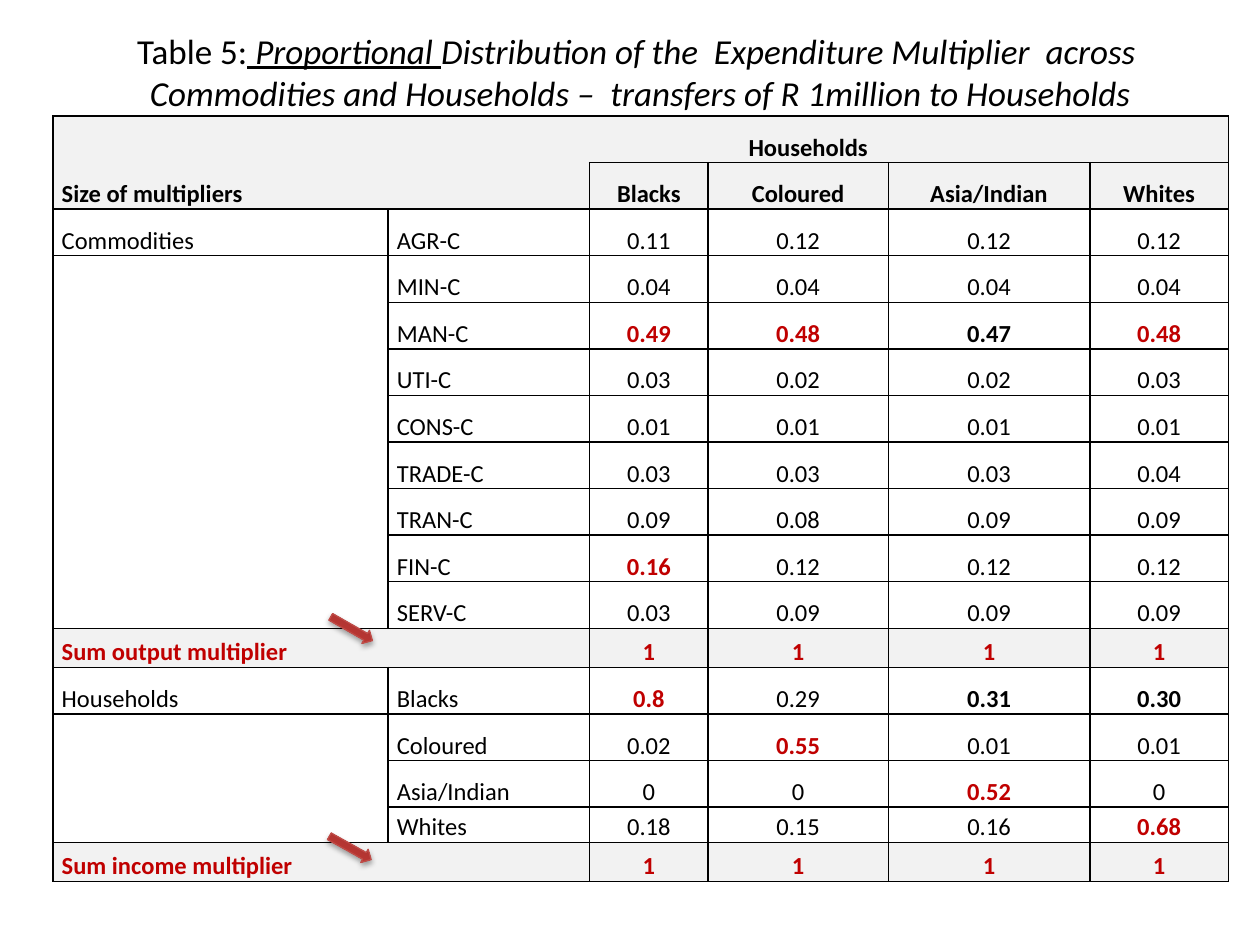
"""Build the slide on the proportional expenditure multiplier by commodity and household."""
from lxml.etree import SubElement
from pptx import Presentation
from pptx.dml.color import RGBColor
from pptx.enum.shapes import MSO_SHAPE
from pptx.enum.text import MSO_ANCHOR, PP_ALIGN
from pptx.oxml import parse_xml
from pptx.oxml.ns import nsdecls, qn
from pptx.util import Inches, Pt

BLACK = RGBColor(0x00, 0x00, 0x00)
RED = RGBColor(0xC0, 0x00, 0x00)
WHITE = RGBColor(0xFF, 0xFF, 0xFF)
GREY = RGBColor(0xF2, 0xF2, 0xF2)
ARROW_LINE = RGBColor(0xBF, 0x4C, 0x48)
ARROW_DARK = RGBColor(0x9C, 0x2F, 0x2D)
ARROW_LIGHT = RGBColor(0xCE, 0x3B, 0x37)
FONT = "Calibri"
NO_GRID_STYLE = "{2D5ABB26-0587-4C30-8999-92F81FD0307C}"

TITLE = [
    ("Table 5:", {}),
    (" ", {"underline": True}),
    ("Proportional ", {"underline": True, "italic": True}),
    ("Distribution of the  Expenditure Multiplier  across  Commodities and Households –  "
     "transfers of R 1million to Households", {"italic": True}),
]
ROWS = [
    ["", "", "Households", "", "", "", ""],
    ["Size of multipliers", "", "", "Blacks", "Coloured", "Asia/Indian", "Whites"],
    ["Commodities", "", "AGR-C", "0.11", "0.12", "0.12", "0.12"],
    ["", "", "MIN-C", "0.04", "0.04", "0.04", "0.04"],
    ["", "", "MAN-C", "0.49", "0.48", "0.47", "0.48"],
    ["", "", "UTI-C", "0.03", "0.02", "0.02", "0.03"],
    ["", "", "CONS-C", "0.01", "0.01", "0.01", "0.01"],
    ["", "", "TRADE-C", "0.03", "0.03", "0.03", "0.04"],
    ["", "", "TRAN-C", "0.09", "0.08", "0.09", "0.09"],
    ["", "", "FIN-C", "0.16", "0.12", "0.12", "0.12"],
    ["", "", "SERV-C", "0.03", "0.09", "0.09", "0.09"],
    ["Sum output multiplier", "", "", "1", "1", "1", "1"],
    ["Households", "", "Blacks", "0.8", "0.29", "0.31", "0.30"],
    ["", "", "Coloured", "0.02", "0.55", "0.01", "0.01"],
    ["", "", "Asia/Indian", "0", "0", "0.52", "0"],
    ["", "", "Whites", "0.18", "0.15", "0.16", "0.68"],
    ["Sum income multiplier", "", "", "1", "1", "1", "1"],
]
HEADER_ROWS = (0, 1)
SUM_ROWS = (11, 16)
RED_CELLS = {(4, 3), (4, 4), (4, 6), (9, 3), (12, 3), (13, 4), (14, 5), (15, 6)}
BOLD_CELLS = {(4, 5), (12, 5), (12, 6)}
COL_WIDTHS = [1.33, 1.33, 1.6, 0.94, 1.43, 1.6, 1.1]
ROW_HEIGHT, SHORT_ROWS = 0.37, {11: 0.31, 15: 0.28, 16: 0.31}
ARROWS = [(2.6, 4.93, 29.7), (2.59, 6.67, 29.2)]


def region(row, col):
    """Name the outlined area that a cell belongs to."""
    if not (0 <= row < len(ROWS) and 0 <= col < len(COL_WIDTHS)):
        return "outside"
    if row == 0 or (row == 1 and col < 3):
        return "header"
    if row in SUM_ROWS and col < 3:
        return f"sum {row}"
    if col < 2:
        return "commodities" if row < SUM_ROWS[0] else "households"
    return row, col


def add_borders(cell, row, col):
    """Draw each cell side that meets another region."""
    neighbours = {
        "L": (row, col - 1),
        "R": (row, col + (cell.span_width if cell.is_merge_origin else 1)),
        "T": (row - 1, col),
        "B": (row + 1, col),
    }
    tc_pr = cell._tc.get_or_add_tcPr()
    for side, other in neighbours.items():
        if region(*other) != region(row, col):
            tc_pr.append(parse_xml(
                f'<a:ln{side} {nsdecls("a")} w="12700"><a:solidFill>'
                f'<a:srgbClr val="{BLACK}"/></a:solidFill></a:ln{side}>'))


def add_run(p, text, size, color=BLACK, **style):
    """Append a formatted run."""
    r = p.add_run()
    r.text = text
    for name, value in {"name": FONT, "size": Pt(size), **style}.items():
        setattr(r.font, name, value)
    r.font.color.rgb = color


def fill_cell(cell, row, col):
    """Set the text, borders and fill of one table cell."""
    shaded = row in HEADER_ROWS + SUM_ROWS
    cell.vertical_anchor = MSO_ANCHOR.BOTTOM
    cell.margin_left = cell.margin_right = Inches(0.07)
    cell.margin_top = cell.margin_bottom = 0
    p = cell.text_frame.paragraphs[0]
    if ROWS[row][col]:
        red = row in SUM_ROWS or (row, col) in RED_CELLS
        bold = shaded or red or (row, col) in BOLD_CELLS
        p.alignment = PP_ALIGN.CENTER if col > 2 or row == 0 else PP_ALIGN.LEFT
        add_run(p, ROWS[row][col], 14, RED if red else BLACK, bold=bold)
    else:
        SubElement(p._p, qn("a:endParaRPr"), sz="1400")
    add_borders(cell, row, col)
    cell.fill.solid()
    cell.fill.fore_color.rgb = GREY if shaded else WHITE


def add_title(s):
    """Place and write the title."""
    sp = s.shapes.title
    sp.left, sp.top, sp.width, sp.height = map(Inches, (0.5, 0.3, 9.17, 0.53))
    tf = sp.text_frame
    tf.word_wrap = True
    tf.vertical_anchor = MSO_ANCHOR.MIDDLE
    p = tf.paragraphs[0]
    p.alignment = PP_ALIGN.CENTER
    for text, style in TITLE:
        add_run(p, text, 20, **style)


def add_multiplier_table(s):
    """Build the table of multipliers."""
    heights = [SHORT_ROWS.get(i, ROW_HEIGHT) for i in range(len(ROWS))]
    frame = s.shapes.add_table(
        len(ROWS), len(COL_WIDTHS), Inches(0.42), Inches(0.92),
        Inches(sum(COL_WIDTHS)), Inches(sum(heights)))
    table = frame.table
    table._tbl.tblPr.find(qn("a:tableStyleId")).text = NO_GRID_STYLE
    table.first_row = table.horz_banding = False
    for column, width in zip(table.columns, COL_WIDTHS):
        column.width = Inches(width)
    for line, height in zip(table.rows, heights):
        line.height = Inches(height)
    table.cell(0, 2).merge(table.cell(0, 6))
    for row, texts in enumerate(ROWS):
        if row and texts[0]:
            table.cell(row, 0).merge(table.cell(row, 1))
        for col in range(len(texts)):
            fill_cell(table.cell(row, col), row, col)


def add_arrow(s, left, top, rotation):
    """Add a red arrow that points at a sum row."""
    sp = s.shapes.add_shape(
        MSO_SHAPE.RIGHT_ARROW, Inches(left), Inches(top), Inches(0.38), Inches(0.12))
    sp.rotation = rotation
    sp.fill.gradient()
    sp.fill.gradient_angle = 90
    for stop, color in zip(sp.fill.gradient_stops, (ARROW_DARK, ARROW_LIGHT)):
        stop.color.rgb = color
    sp.line.color.rgb = ARROW_LINE
    sp.line.width = Pt(0.75)
    sp.shadow.inherit = False
    sp._element.spPr.xfrm.set("flipV", "1")
    sp._element.spPr.find(qn("a:effectLst")).append(parse_xml(
        f'<a:outerShdw {nsdecls("a")} blurRad="{Pt(3.1)}" dist="{Pt(1.8)}" dir="5400000" '
        f'rotWithShape="0"><a:srgbClr val="{BLACK}"><a:alpha val="35000"/></a:srgbClr>'
        '</a:outerShdw>'))


def main():
    """Create and save the presentation."""
    prs = Presentation()
    prs.slide_width, prs.slide_height = Inches(10), Inches(7.5)
    s = prs.slides.add_slide(prs.slide_layouts[5])
    add_title(s)
    add_multiplier_table(s)
    for arrow in ARROWS:
        add_arrow(s, *arrow)
    prs.save("out.pptx")


if __name__ == "__main__":
    main()
